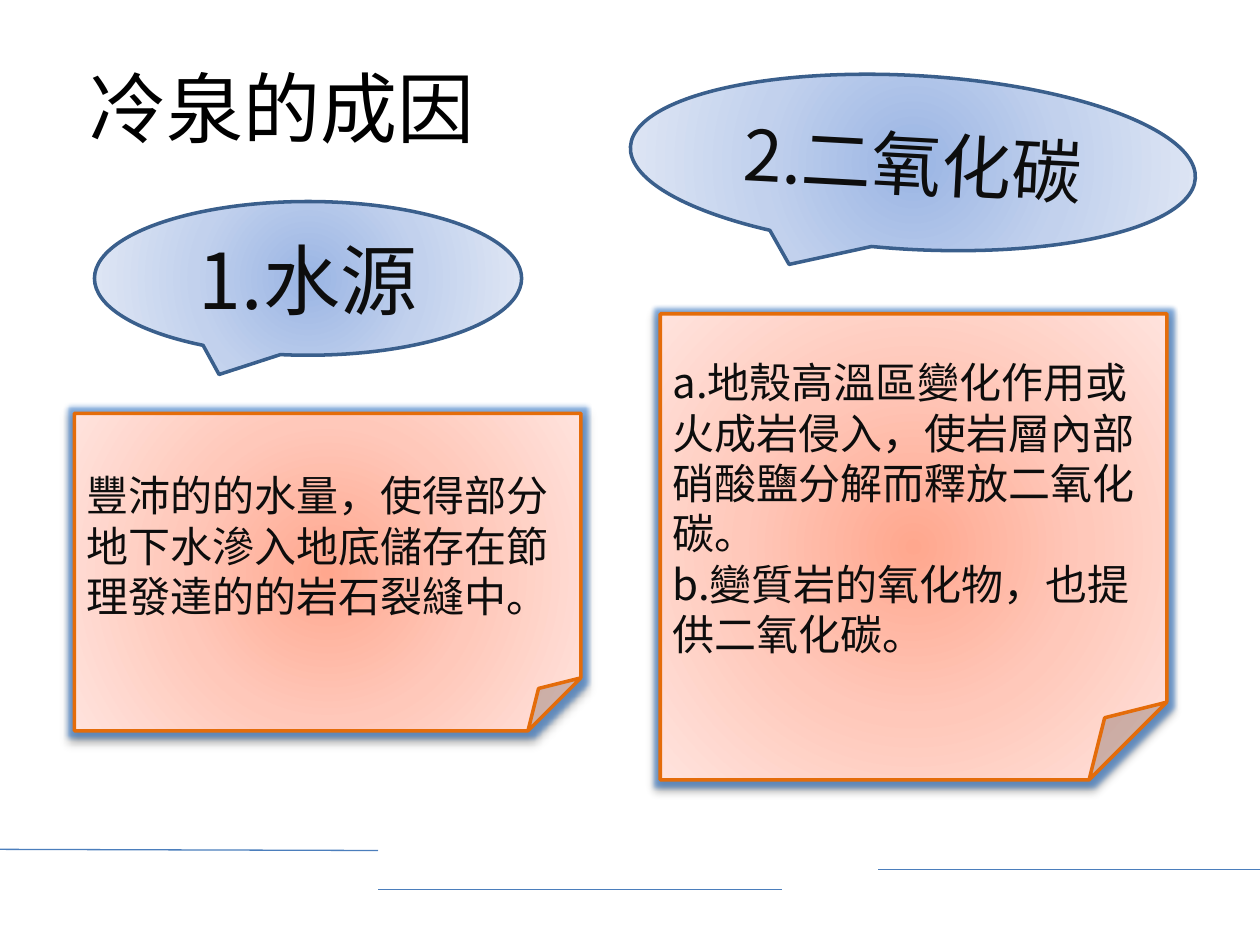
from dataclasses import dataclass

from lxml import etree
from pptx import Presentation
from pptx import util as u
from pptx.dml.color import RGBColor
from pptx.enum import shapes, text
from pptx.oxml import parse_xml
from pptx.oxml.ns import nsdecls, qn

FONT = "Noto Sans CJK SC"
INK = "0D0D0D"
WIDTH, HEIGHT = u.Inches(10), u.Inches(7.5)


@dataclass(frozen=True)
class Box:
    """A rectangle in percent of the slide's width and height."""
    left: float
    top: float
    width: float
    height: float

    def emu(self) -> tuple[int, int, int, int]:
        return (across(self.left), down(self.top),
                across(self.width), down(self.height))


@dataclass(frozen=True)
class Style:
    kind: shapes.MSO_SHAPE
    gradient: tuple[str, str, str]  # centre, middle, edge
    outline: str
    align: text.PP_ALIGN
    raised: bool


@dataclass(frozen=True)
class Panel:
    style: Style
    box: Box
    paragraphs: tuple[str, ...]
    size: int
    rotation: float = 0


@dataclass(frozen=True)
class Rule:
    start: tuple[float, float]
    end: tuple[float, float]


CALLOUT = Style(shapes.MSO_SHAPE.OVAL_CALLOUT, ("9AB5E4", "C2D1ED", "E1E8F5"),
                "3A5F8C", text.PP_ALIGN.CENTER, False)
NOTE = Style(shapes.MSO_SHAPE.FOLDED_CORNER, ("FFA78E", "FFC8BA", "FFE3DD"),
             "E46C0A", text.PP_ALIGN.LEFT, True)

TITLE_BOX = Box(5, 4, 34.8, 14.53)
PANELS = (
    Panel(CALLOUT, Box(7.5, 21.33, 33.9, 16.27), ("1.水源",), 44),
    Panel(CALLOUT, Box(50, 8, 44.9, 18.4), ("2.二氧化碳",), 40, 3.2),
    Panel(NOTE, Box(5.9, 43.73, 40.2, 33.6),
          ("豐沛的的水量，使得部分地下水滲入地底儲存在節理發達的的岩石裂縫中。",), 24),
    Panel(NOTE, Box(52.4, 33.2, 40.2, 49.33),
          ("a.地殼高溫區變化作用或火成岩侵入，使岩層內部硝酸鹽分解而釋放二氧化碳。",
           "b.變質岩的氧化物，也提供二氧化碳。"), 24),
)
RULES = (
    Rule((-2, 89.87), (30, 90)),
    Rule((30, 94.13), (62.1, 94.13)),
    Rule((69.7, 92), (101.7, 92)),
)


def across(percent: float) -> int:
    return round(WIDTH * percent / 100)


def down(percent: float) -> int:
    return round(HEIGHT * percent / 100)


def color(value: str) -> RGBColor:
    return RGBColor.from_string(value)


def write(paragraph, content: str, *, size: int, ink: str,
          align: text.PP_ALIGN) -> None:
    paragraph.alignment = align
    run = paragraph.add_run()
    run.text = content
    run.font.size = u.Pt(size)
    run.font.name = FONT
    run.font.color.rgb = color(ink)
    properties = run.font._element
    etree.SubElement(properties, qn("a:ea")).set("typeface", FONT)


def fill_radial(shape, gradient: tuple[str, str, str]) -> None:
    stops = "".join(
        f'<a:gs pos="{index * 50000}"><a:srgbClr val="{value}"/></a:gs>'
        for index, value in enumerate(gradient))
    shape.fill.background()
    properties = shape._element.spPr
    properties.replace(properties.find(qn("a:noFill")), parse_xml(
        f'<a:gradFill {nsdecls("a")} rotWithShape="1"><a:gsLst>{stops}</a:gsLst>'
        '<a:path path="circle"><a:fillToRect l="50000" t="50000" r="50000" '
        'b="50000"/></a:path></a:gradFill>'))


def raise_shape(shape) -> None:
    """Give the shape a blue glow and a soft shadow below."""
    effects = shape._element.spPr.find(qn("a:effectLst"))
    effects.append(parse_xml(
        f'<a:glow {nsdecls("a")} rad="{u.Pt(5)}"><a:srgbClr val="3A7CCB">'
        '<a:alpha val="60000"/></a:srgbClr></a:glow>'))
    effects.append(parse_xml(
        f'<a:outerShdw {nsdecls("a")} blurRad="{u.Pt(4)}" dist="{u.Pt(3)}" '
        'dir="5400000" rotWithShape="0"><a:srgbClr val="000000">'
        '<a:alpha val="40000"/></a:srgbClr></a:outerShdw>'))


def draw_panel(slide, panel: Panel) -> None:
    style = panel.style
    shape = slide.shapes.add_shape(style.kind, *panel.box.emu())
    shape.rotation = panel.rotation
    fill_radial(shape, style.gradient)
    shape.line.color.rgb = color(style.outline)
    shape.line.width = u.Pt(2)
    shape.shadow.inherit = False
    if style.raised:
        raise_shape(shape)
    frame = shape.text_frame
    frame.word_wrap = True
    frame.vertical_anchor = text.MSO_ANCHOR.MIDDLE
    for index, content in enumerate(panel.paragraphs):
        paragraph = frame.add_paragraph() if index else frame.paragraphs[0]
        write(paragraph, content, size=panel.size, ink=INK, align=style.align)


def draw_rule(slide, rule: Rule) -> None:
    (x1, y1), (x2, y2) = rule.start, rule.end
    line = slide.shapes.add_connector(
        shapes.MSO_CONNECTOR.STRAIGHT, across(x1), down(y1), across(x2), down(y2))
    line.line.color.rgb = color("4B7EBC")
    line.line.width = u.Pt(0.75)
    etree.SubElement(line._element.spPr, qn("a:effectLst"))


def draw_title(slide, content: str) -> None:
    title = slide.shapes.title
    title.left, title.top, title.width, title.height = TITLE_BOX.emu()
    title.text_frame.vertical_anchor = text.MSO_ANCHOR.MIDDLE
    write(title.text_frame.paragraphs[0], content, size=44, ink="000000",
          align=text.PP_ALIGN.CENTER)


def main() -> None:
    presentation = Presentation()
    presentation.slide_width, presentation.slide_height = WIDTH, HEIGHT
    slide = presentation.slides.add_slide(presentation.slide_layouts[5])

    # Title
    draw_title(slide, "冷泉的成因")

    # Callouts and notes
    for panel in PANELS:
        draw_panel(slide, panel)

    # Water lines at the foot
    for rule in RULES:
        draw_rule(slide, rule)

    presentation.save("out.pptx")


if __name__ == "__main__":
    main()
